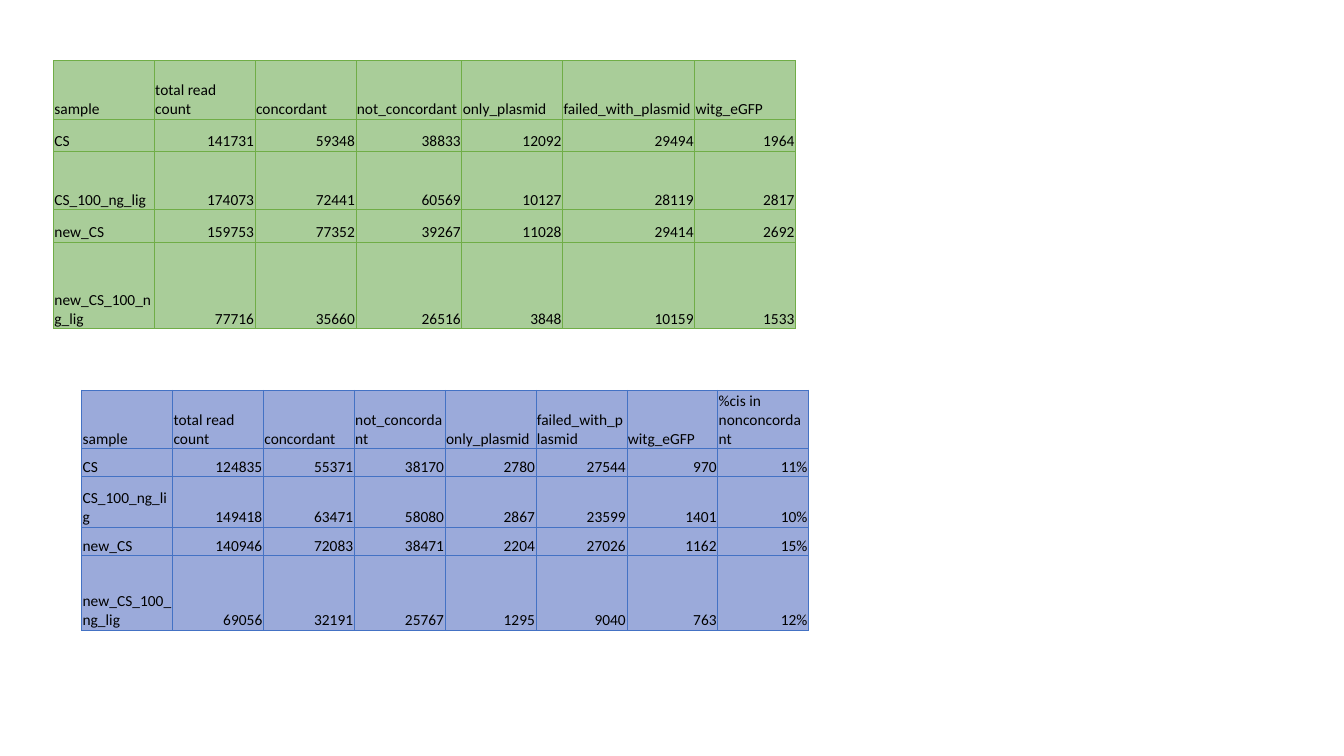
from lxml import etree
from pptx import Presentation
from pptx.dml.color import RGBColor
from pptx.enum import text
from pptx.oxml import ns
from pptx.util import Inches, Pt

COLORS = {
    "ink": "000000",
    "green": "A9CD99",
    "green_line": "70AD47",
    "blue": "9BAADA",
    "blue_line": "4472C4",
}
HEADINGS = ["sample", "total read count", "concordant", "not_concordant",
            "only_plasmid", "failed_with_plasmid", "witg_eGFP"]
SAMPLES = ["CS", "CS_100_ng_lig", "new_CS", "new_CS_100_ng_lig"]
ALL_READS = [
    [141731, 59348, 38833, 12092, 29494, 1964],
    [174073, 72441, 60569, 10127, 28119, 2817],
    [159753, 77352, 39267, 11028, 29414, 2692],
    [77716, 35660, 26516, 3848, 10159, 1533],
]
CIS_READS = [
    [124835, 55371, 38170, 2780, 27544, 970, "11%"],
    [149418, 63471, 58080, 2867, 23599, 1401, "10%"],
    [140946, 72083, 38471, 2204, 27026, 1162, "15%"],
    [69056, 32191, 25767, 1295, 9040, 763, "12%"],
]


class SlideBuilder:
    font = "Calibri"
    size = Pt(11)
    line_width = Pt(0.5)
    inset = Inches(0.01)

    def __init__(self, slide):
        self.slide = slide

    def table(self, left, top, widths, heights, headings, counts, hue):
        rows = [headings] + [[sample] + values for sample, values in zip(SAMPLES, counts)]
        table = self.slide.shapes.add_table(
            len(rows), len(headings), Inches(left), Inches(top),
            Inches(sum(widths)), Inches(sum(heights))).table
        table.first_row = table.horz_banding = False
        for column, width in zip(table.columns, widths):
            column.width = Inches(width)
        for row, height in zip(table.rows, heights):
            row.height = Inches(height)
        for r, values in enumerate(rows):
            for c, value in enumerate(values):
                self.cell(table.cell(r, c), str(value), hue, r > 0 and c > 0)

    def cell(self, cell, content, hue, is_count):
        self.borders(cell, COLORS[hue + "_line"])
        cell.fill.solid()
        cell.fill.fore_color.rgb = RGBColor.from_string(COLORS[hue])
        cell.margin_left = cell.margin_right = cell.margin_top = self.inset
        cell.margin_bottom = 0
        cell.vertical_anchor = text.MSO_ANCHOR.BOTTOM
        cell.text_frame.text = content
        paragraph = cell.text_frame.paragraphs[0]
        paragraph.alignment = text.PP_ALIGN.RIGHT if is_count else text.PP_ALIGN.LEFT
        font = paragraph.runs[0].font
        font.name = self.font
        font.size = self.size
        font.color.rgb = RGBColor.from_string(COLORS["ink"])

    def borders(self, cell, color):
        properties = cell._tc.get_or_add_tcPr()
        for side in ("a:lnL", "a:lnR", "a:lnT", "a:lnB"):
            line = etree.SubElement(properties, ns.qn(side), w=str(self.line_width))
            fill = etree.SubElement(line, ns.qn("a:solidFill"))
            etree.SubElement(fill, ns.qn("a:srgbClr"), val=color)


def main():
    deck = Presentation()
    deck.slide_width = Inches(13.33)
    deck.slide_height = Inches(7.5)
    builder = SlideBuilder(deck.slides.add_slide(deck.slide_layouts[6]))
    builder.table(0.53, 0.6, [1, 1, 1, 1.05, 1, 1.31, 1],
                  [0.58, 0.32, 0.58, 0.32, 0.86], HEADINGS, ALL_READS, "green")
    builder.table(0.81, 3.87, [7.21 / 8] * 8,
                  [0.58, 0.28, 0.5, 0.28, 0.74],
                  HEADINGS + ["%cis in nonconcordant"], CIS_READS, "blue")
    deck.save("out.pptx")


if __name__ == "__main__":
    main()
